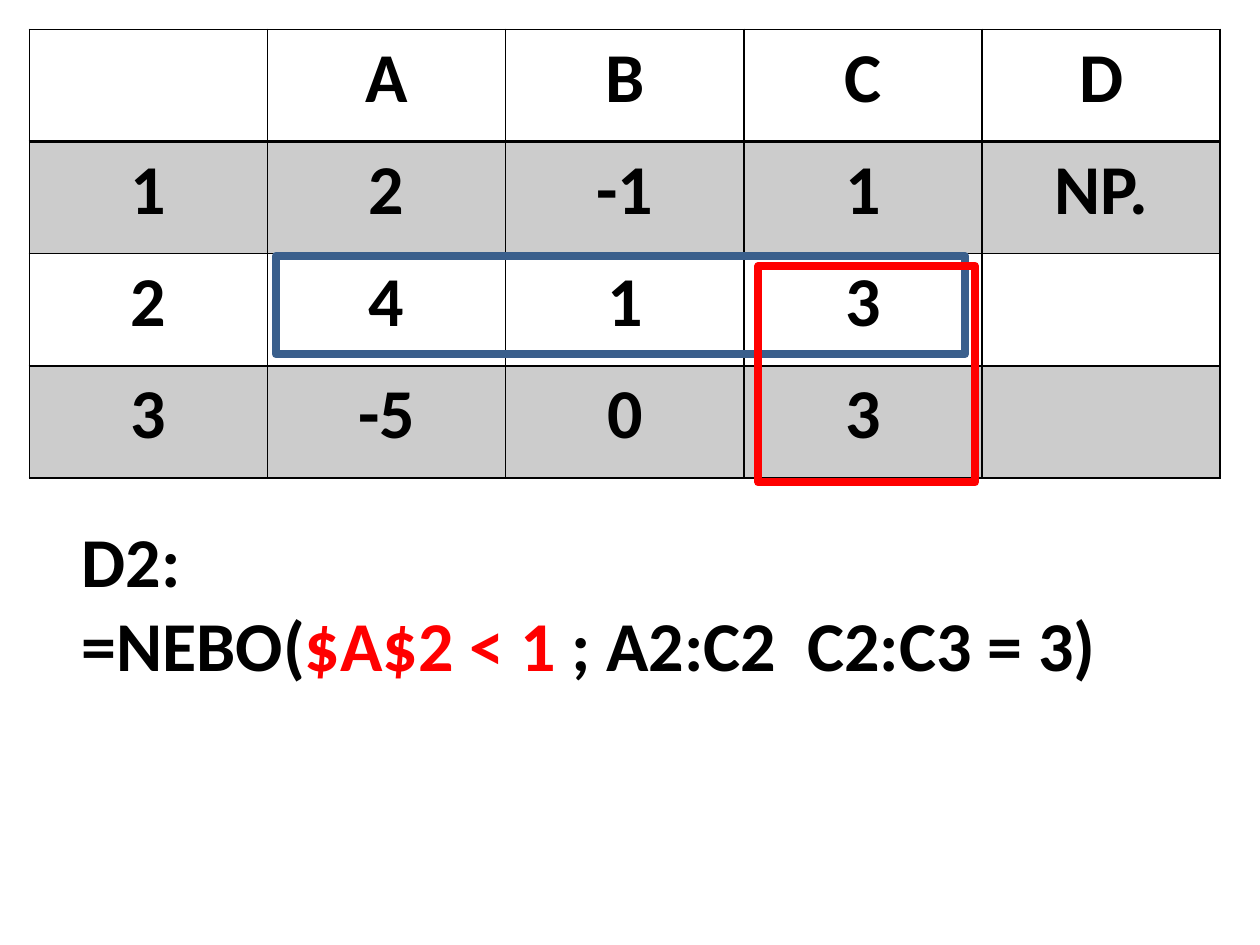
"""Build a slide with a small spreadsheet and a formula on two overlapping ranges."""
from lxml import etree
from pptx import Presentation
from pptx.dml.color import RGBColor
from pptx.enum import shapes, text
from pptx.oxml import ns
from pptx.util import Pt

COLORS = {"ink": "000000", "accent": "FF0000", "row_range": "3A5F8C"}
FONT, SIZE = "Calibri", 40
SHEET = [
    ["", "A", "B", "C", "D"],
    ["1", "2", "-1", "1", "NP."],
    ["2", "4", "1", "3", ""],
    ["3", "-5", "0", "3", ""],
]
SHEET_LEFT, SHEET_TOP, CELL_WIDTH, CELL_HEIGHT = 16.8, 16.8, 136.1, 64.1
BAND_OPACITY = 20
FORMULA = [
    [("D2:", "ink")],
    [("=NEBO(", "ink"), ("$A$2 < 1 ", "accent"), ("; A2:C2  C2:C3 = 3)", "ink")],
]
FORMULA_BOX = (39.6, 292.3, 641.5, 104.4)
RANGES = [
    ("row_range", (157.7, 146.2, 393.8, 56.2)),
    ("accent", (433.4, 151.9, 123.8, 123.8)),
]


def rgb(name):
    return RGBColor.from_string(COLORS[name])


def style_span(span, color):
    span.font.name, span.font.size, span.font.bold = FONT, Pt(SIZE), True
    span.font.color.rgb = rgb(color)


def border_cell(cell, sides):
    properties = cell._tc.get_or_add_tcPr()
    for position, (side, width) in enumerate(sides.items()):
        line = etree.Element(ns.qn(f"a:ln{side}"), w=str(Pt(width)))
        fill = etree.SubElement(line, ns.qn("a:solidFill"))
        etree.SubElement(fill, ns.qn("a:srgbClr"), val=COLORS["ink"])
        properties.insert(position, line)


def shade_cell(cell, banded):
    if not banded:
        cell.fill.background()
        return
    cell.fill.solid()
    cell.fill.fore_color.rgb = rgb("ink")
    color = cell._tc.tcPr.find(".//" + ns.qn("a:srgbClr"))
    etree.SubElement(color, ns.qn("a:alpha"), val=str(BAND_OPACITY * 1000))


def add_sheet(page):
    rows, columns = len(SHEET), len(SHEET[0])
    place = (SHEET_LEFT, SHEET_TOP, columns * CELL_WIDTH, rows * CELL_HEIGHT)
    table = page.shapes.add_table(rows, columns, *map(Pt, place)).table
    for column in table.columns:
        column.width = Pt(CELL_WIDTH)
    for index, (row, values) in enumerate(zip(table.rows, SHEET)):
        row.height = Pt(CELL_HEIGHT)
        for cell, value in zip(row.cells, values):
            shade_cell(cell, index % 2 == 1)
            border_cell(cell, {"L": 1, "R": 1, "T": 2 if index == 1 else 1,
                               "B": 2 if index == 0 else 1})
            para = cell.text_frame.paragraphs[0]
            para.alignment = text.PP_ALIGN.CENTER
            if value:
                para.text = value
                style_span(para.runs[0], "ink")


def add_formula(page):
    frame = page.shapes.add_textbox(*map(Pt, FORMULA_BOX)).text_frame
    frame.word_wrap = True
    frame.auto_size = text.MSO_AUTO_SIZE.SHAPE_TO_FIT_TEXT
    frame.text = "\n" * (len(FORMULA) - 1)
    for para, parts in zip(frame.paragraphs, FORMULA):
        for words, color in parts:
            span = para.add_run()
            span.text = words
            style_span(span, color)


def add_range(page, color, place):
    box = page.shapes.add_shape(shapes.MSO_SHAPE.RECTANGLE, *map(Pt, place))
    box.shadow.inherit = False
    box.fill.background()
    box.line.color.rgb = rgb(color)
    box.line.width = Pt(4.5)
    etree.SubElement(box.line._ln, ns.qn("a:round"))


def main():
    deck = Presentation()
    deck.slide_width, deck.slide_height = Pt(720), Pt(540)
    page = deck.slides.add_slide(deck.slide_layouts[6])
    add_sheet(page)
    add_formula(page)
    for color, place in RANGES:
        add_range(page, color, place)
    deck.save("out.pptx")


if __name__ == "__main__":
    main()
